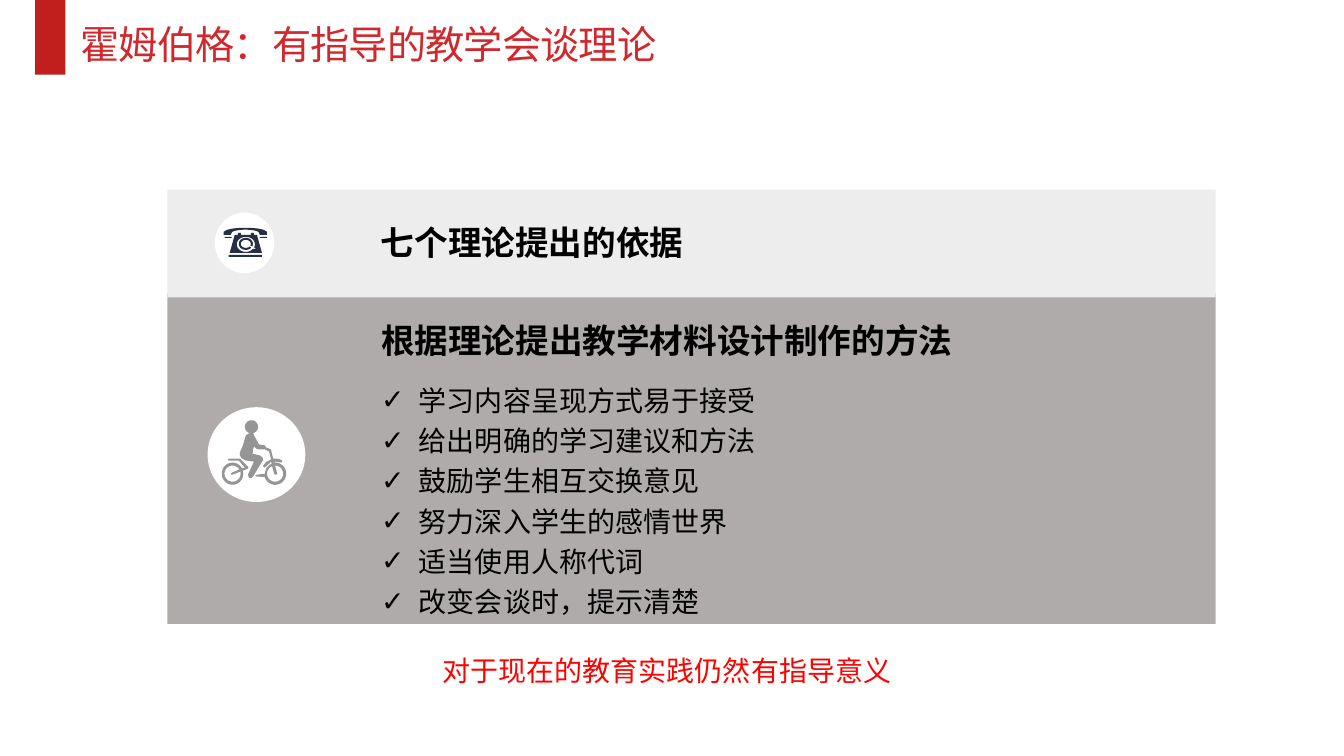
import math
from dataclasses import dataclass

import pptx
import pptx.dml.color
import pptx.enum.shapes
import pptx.enum.text
import pptx.oxml.ns
import pptx.util
from lxml import etree

Pt = pptx.util.Pt
MSO = pptx.enum.shapes.MSO_SHAPE
Point = tuple[float, float]
Box = tuple[float, float, float, float]

FONT = "Noto Sans CJK SC"
ICON_GRID = 0.72  # points per icon unit
ICON_STEPS = 10  # subdivisions of an icon unit
INDENT = 27

HEADING = {"size": Pt(24), "bold": True}
ITEM = {"size": Pt(20), "bold": False}
TITLE = {"size": Pt(28), "bold": False}

METHODS = [
    "学习内容呈现方式易于接受",
    "给出明确的学习建议和方法",
    "鼓励学生相互交换意见",
    "努力深入学生的感情世界",
    "适当使用人称代词",
    "改变会谈时，提示清楚",
]


@dataclass
class Icon:
    origin: Point
    color: str
    contours: list[list[Point]]


@dataclass
class Band:
    box: Box
    color: str
    disc: Box
    icon: Icon


def arc(cx: float, cy: float, rx: float, ry: float, start: float, end: float) -> list[Point]:
    """Sample an elliptical arc; angles in degrees, clockwise from the right."""
    n = max(2, math.ceil(abs(end - start) / 10))
    angles = [math.radians(start + (end - start) * i / n) for i in range(n + 1)]
    return [(cx + rx * math.cos(a), cy + ry * math.sin(a)) for a in angles]


def rectangle(x: float, y: float, w: float, h: float) -> list[Point]:
    return [(x, y), (x + w, y), (x + w, y + h), (x, y + h)]


PHONE = [
    rectangle(5, 27, 33, 2),
    rectangle(1, 9, 7, 1),
    rectangle(36, 9, 7, 1),
    # dial ring, its surround, the body and the handset
    arc(22, 16, 7, 6, 40, 385) + arc(22, 16, 5, 4, 385, 40),
    arc(22, 16.5, 9, 7.5, 50, 385) + [(32, 20), (31, 21), (29, 21)],
    [(14, 5), (17, 5), (17, 7), (27, 7), (27, 5), (30, 5), (30, 7), (33, 7),
     (38, 25), (6, 25), (11, 7), (14, 7)],
    arc(21.5, 4, 20.5, 4, 195, 345) + [(43, 4), (43, 7), (36, 7), (35, 5)]
    + arc(21.5, 5, 13.5, 3, 360, 180) + [(7, 7), (0, 7), (0, 4)],
]

CYCLIST = [
    # openings of the front and rear wheels
    arc(53, 53, 8, 8, -90, 248) + [(52, 53), (53, 54), (54, 54), (55, 53)],
    arc(10.7, 53, 8, 8, -15, 328) + [(10, 52), (9, 53), (9.5, 54), (11, 54)],
    # rear wheel with its frame
    [(7, 38), (17, 38), (18, 38), (26, 46), (26.5, 47), (26, 48), (21, 50)]
    + arc(10.7, 53, 10.7, 11, 0, 331) + [(23, 47), (17, 40), (7, 40), (6, 39)],
    # rider, handlebar and front wheel
    arc(29.5, 6.5, 6.5, 6.5, 105, 435)
    + [(32, 15), (37, 24), (43, 25), (44, 27), (49, 29), (49, 30), (51, 38), (53, 38),
       (57, 38.5), (60, 40), (60, 41), (59, 42), (53, 41), (52, 41)]
    + arc(53, 53, 11, 11, -90, 163)
    + [(35, 56), (33, 55), (35, 54)]
    + arc(53, 53, 10, 10.5, 180, 250)
    + [(49, 41), (44, 46), (42, 47), (41, 45), (44, 41.5), (49, 39), (47, 31), (43, 29),
       (36, 29), (34, 28), (32, 26), (31, 29), (31, 32), (30, 33), (38, 35), (40.5, 37),
       (41, 40), (40, 41), (31, 56), (29, 57.5), (27, 57), (26, 54), (32, 41), (24, 40),
       (20, 38), (18, 35), (18, 32), (21, 25), (23, 18), (24, 15), (27, 13)],
]

BANDS = [
    Band((119.5, 209.5, 748.8, 236.2), "AFABAB", (148.3, 290.9, 69.8, 67.7),
         Icon((158.4, 300.2), "959595", CYCLIST)),
    Band((119.5, 135.4, 748.8, 77), "EDEDED", (153.4, 151.9, 42.5, 43.2),
         Icon((159.8, 162.7), "272F42", PHONE)),
]


def rgb(value: str) -> pptx.dml.color.RGBColor:
    return pptx.dml.color.RGBColor.from_string(value)


def paint(sp, color: str) -> None:
    sp.fill.solid()
    sp.fill.fore_color.rgb = rgb(color)
    sp.line.fill.background()
    sp.shadow.inherit = False


def add_filled(shapes, kind: MSO, box: Box, color: str) -> None:
    paint(shapes.add_shape(kind, *map(Pt, box)), color)


def add_icon(shapes, icon: Icon) -> None:
    fb = None
    for contour in icon.contours:
        pts = [(round(x * ICON_STEPS), round(y * ICON_STEPS)) for x, y in contour]
        if fb is None:
            fb = shapes.build_freeform(*pts[0], scale=Pt(ICON_GRID / ICON_STEPS))
        else:
            fb.move_to(*pts[0])
        fb.add_line_segments(pts[1:], close=True)
    paint(fb.convert_to_shape(*map(Pt, icon.origin)), icon.color)


def add_band(s, band: Band) -> None:
    group = s.shapes.add_group_shape()
    add_filled(group.shapes, MSO.RECTANGLE, band.box, band.color)
    add_filled(group.shapes, MSO.OVAL, band.disc, "FFFFFF")
    add_icon(group.shapes, band.icon)


def write(p, text: str, fmt: dict, color: str = "000000"):
    r = p.add_run()
    r.text = text
    for name, value in fmt.items():
        setattr(r.font, name, value)
    r.font.name = FONT
    r.font.color.rgb = rgb(color)
    ea = etree.SubElement(r.font._element, pptx.oxml.ns.qn("a:ea"))
    ea.set("typeface", FONT)
    return r


def set_bullet(p, char: str | None) -> None:
    pPr = p._p.get_or_add_pPr()
    indent = INDENT if char else 0
    pPr.set("marL", str(Pt(indent)))
    pPr.set("indent", str(Pt(-indent)))
    bu = etree.SubElement(pPr, pptx.oxml.ns.qn("a:buChar" if char else "a:buNone"))
    if char:
        bu.set("char", char)


def place(sp, box: Box, wrap: bool):
    """Move a text shape to the front of the slide and prepare its frame."""
    for name, value in zip(("left", "top", "width", "height"), box):
        setattr(sp, name, Pt(value))
    sp.element.getparent().append(sp.element)
    tf = sp.text_frame
    frame = {"word_wrap": wrap, "auto_size": pptx.enum.text.MSO_AUTO_SIZE.NONE,
             "vertical_anchor": pptx.enum.text.MSO_ANCHOR.TOP}
    for name, value in frame.items():
        setattr(tf, name, value)
    p = tf.paragraphs[0]
    p.alignment = pptx.enum.text.PP_ALIGN.LEFT
    return tf, p


def main() -> None:
    prs = pptx.Presentation()
    prs.slide_width, prs.slide_height = Pt(960), Pt(540)
    s = prs.slides.add_slide(prs.slide_layouts[1])
    title, body = s.placeholders

    add_filled(s.shapes, MSO.RECTANGLE, (25.2, 0, 21.6, 53.3), "C11E1E")
    for band in BANDS:
        add_band(s, band)

    tf, p = place(body, (265, 224.6, 496, 220.3), True)
    write(p, "根据理论提出教学材料设计制作的方法", HEADING)
    p.space_before, p.space_after = Pt(0), Pt(12)
    set_bullet(p, None)
    for method in METHODS:
        p = tf.add_paragraph()
        write(p, method, ITEM)
        p.space_before, p.line_spacing = Pt(0), 1.2
        set_bullet(p, "✓")

    tf, p = place(s.shapes.add_textbox(0, 0, 0, 0), (265, 154.8, 232.6, 36), False)
    write(p, "七个理论提出的依据", HEADING)

    tf, p = place(title, (50.4, 10.8, 429.8, 41), False)
    r = write(p, "霍姆伯格：有指导的教学会谈理论", TITLE, "D1282E")
    r.font._element.set("spc", "-60")

    tf, p = place(s.shapes.add_textbox(0, 0, 0, 0), (309, 463, 337, 31.7), False)
    write(p, "对于现在的教育实践仍然有指导意义", ITEM, "FF0000")

    prs.save("out.pptx")


if __name__ == "__main__":
    main()
